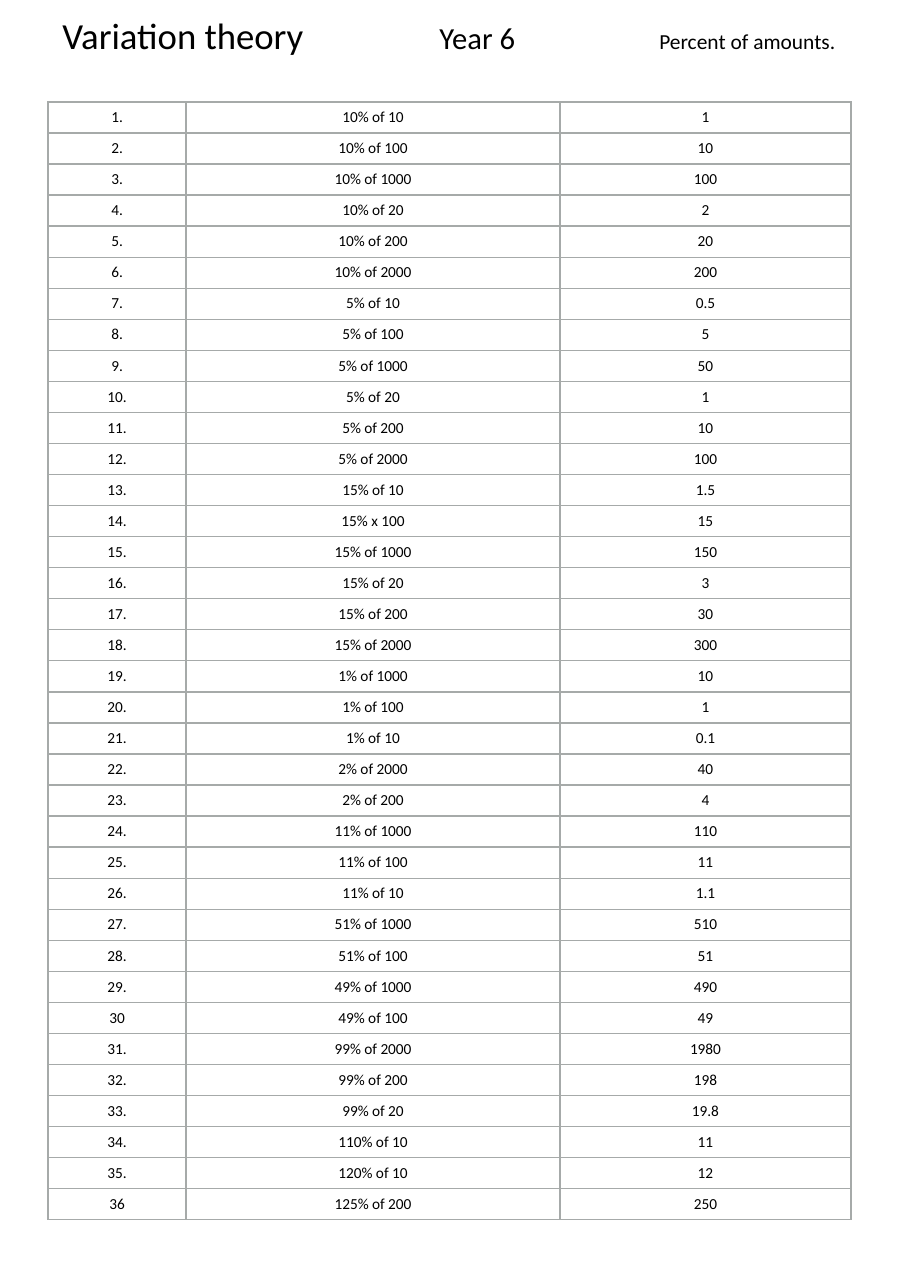
from dataclasses import dataclass

from lxml import etree
from pptx import Presentation, util as u
from pptx.dml.color import RGBColor
from pptx.enum import text
from pptx.oxml.ns import qn


@dataclass(frozen=True)
class Theme:
    font: str = "Calibri"
    ink: str = "000000"
    paper: str = "FFFFFF"
    rule: str = "A6AAA9"
    rule_width: int = u.Pt(1)
    topic_size: int = 24
    year_size: int = 20
    subject_size: int = 14
    cell_size: int = 10


# Percentages with the amounts they are taken of, in question order
QUESTION_SETS = [
    (10, [10, 100, 1000, 20, 200, 2000]),
    (5, [10, 100, 1000, 20, 200, 2000]),
    (15, [10, 100, 1000, 20, 200, 2000]),
    (1, [1000, 100, 10]),
    (2, [2000, 200]),
    (11, [1000, 100, 10]),
    (51, [1000, 100]),
    (49, [1000, 100]),
    (99, [2000, 200, 20]),
    (110, [10]),
    (120, [10]),
    (125, [200]),
]
NUMBERS_WITHOUT_DOT = {30, 36}
NUMBERS_WITH_TIMES = {14}


def worksheet_rows():
    questions = [(percent, amount) for percent, amounts in QUESTION_SETS for amount in amounts]
    for number, (percent, amount) in enumerate(questions, start=1):
        dot = "" if number in NUMBERS_WITHOUT_DOT else "."
        word = "x" if number in NUMBERS_WITH_TIMES else "of"
        yield f"{number}{dot}", f"{percent}% {word} {amount}", f"{percent * amount / 100:g}"


def apply_format(target, values):
    for name, value in values.items():
        setattr(target, name, value)


class Worksheet:
    def __init__(self, slide, theme):
        self.slide = slide
        self.theme = theme

    def add_wording(self, paragraph, wording, size):
        run = paragraph.add_run()
        run.text = wording
        apply_format(run.font, {"name": self.theme.font, "size": u.Pt(size)})
        run.font.color.rgb = RGBColor.from_string(self.theme.ink)

    def heading(self, left, top, width, height, parts, tab_stops):
        frame = self.slide.shapes.add_textbox(left, top, width, height).text_frame
        inset = u.Cm(0.05)
        apply_format(frame, {
            "word_wrap": True,
            "auto_size": text.MSO_AUTO_SIZE.SHAPE_TO_FIT_TEXT,
            "vertical_anchor": text.MSO_ANCHOR.MIDDLE,
            "margin_left": inset, "margin_right": inset,
            "margin_top": inset, "margin_bottom": inset,
        })
        line = frame.paragraphs[0]
        stops = etree.SubElement(line._p.get_or_add_pPr(), qn("a:tabLst"))
        for stop in tab_stops:
            etree.SubElement(stops, qn("a:tab"), pos=str(stop), algn="l")
        for wording, size in parts:
            self.add_wording(line, wording, size)

    def table(self, left, top, height, column_widths, rows):
        grid = self.slide.shapes.add_table(
            len(rows), len(column_widths), left, top, sum(column_widths), height).table
        apply_format(grid, {"first_row": False, "horz_banding": False})
        for column, width in zip(grid.columns, column_widths):
            column.width = width
        for row, wordings in zip(grid.rows, rows):
            row.height = height // len(rows)
            for cell, wording in zip(row.cells, wordings):
                self.fill_cell(cell, wording)

    def fill_cell(self, cell, wording):
        inset = u.Cm(0.14)
        apply_format(cell, {
            "vertical_anchor": text.MSO_ANCHOR.MIDDLE,
            "margin_left": inset, "margin_right": inset,
            "margin_top": inset, "margin_bottom": inset,
        })
        line = cell.text_frame.paragraphs[0]
        line.alignment = text.PP_ALIGN.CENTER
        self.add_wording(line, wording, self.theme.cell_size)
        # Borders come before the fill in the cell properties
        properties = cell._tc.get_or_add_tcPr()
        for side in ("lnL", "lnR", "lnT", "lnB"):
            border = etree.SubElement(properties, qn(f"a:{side}"), w=str(self.theme.rule_width))
            solid = etree.SubElement(border, qn("a:solidFill"))
            etree.SubElement(solid, qn("a:srgbClr"), val=self.theme.rule)
        cell.fill.solid()
        cell.fill.fore_color.rgb = RGBColor.from_string(self.theme.paper)


def main():
    deck = Presentation()
    apply_format(deck, {"slide_width": u.Cm(20.98), "slide_height": u.Cm(29.7)})
    theme = Theme()
    sheet = Worksheet(deck.slides.add_slide(deck.slide_layouts[6]), theme)

    # Heading line
    sheet.heading(
        u.Cm(1.39), u.Cm(0.25), u.Cm(17.96), u.Cm(1.12),
        [("Variation theory\t ", theme.topic_size),
         ("Year 6\t", theme.year_size),
         ("Percent of amounts.", theme.subject_size)],
        [u.Cm(8.5), u.Cm(13.76)])

    # Questions and answers
    sheet.table(
        u.Cm(1.11), u.Cm(2.35), u.Cm(25.78),
        [u.Cm(3.18), u.Cm(8.62), u.Cm(6.71)], list(worksheet_rows()))

    deck.save("out.pptx")


if __name__ == "__main__":
    main()
